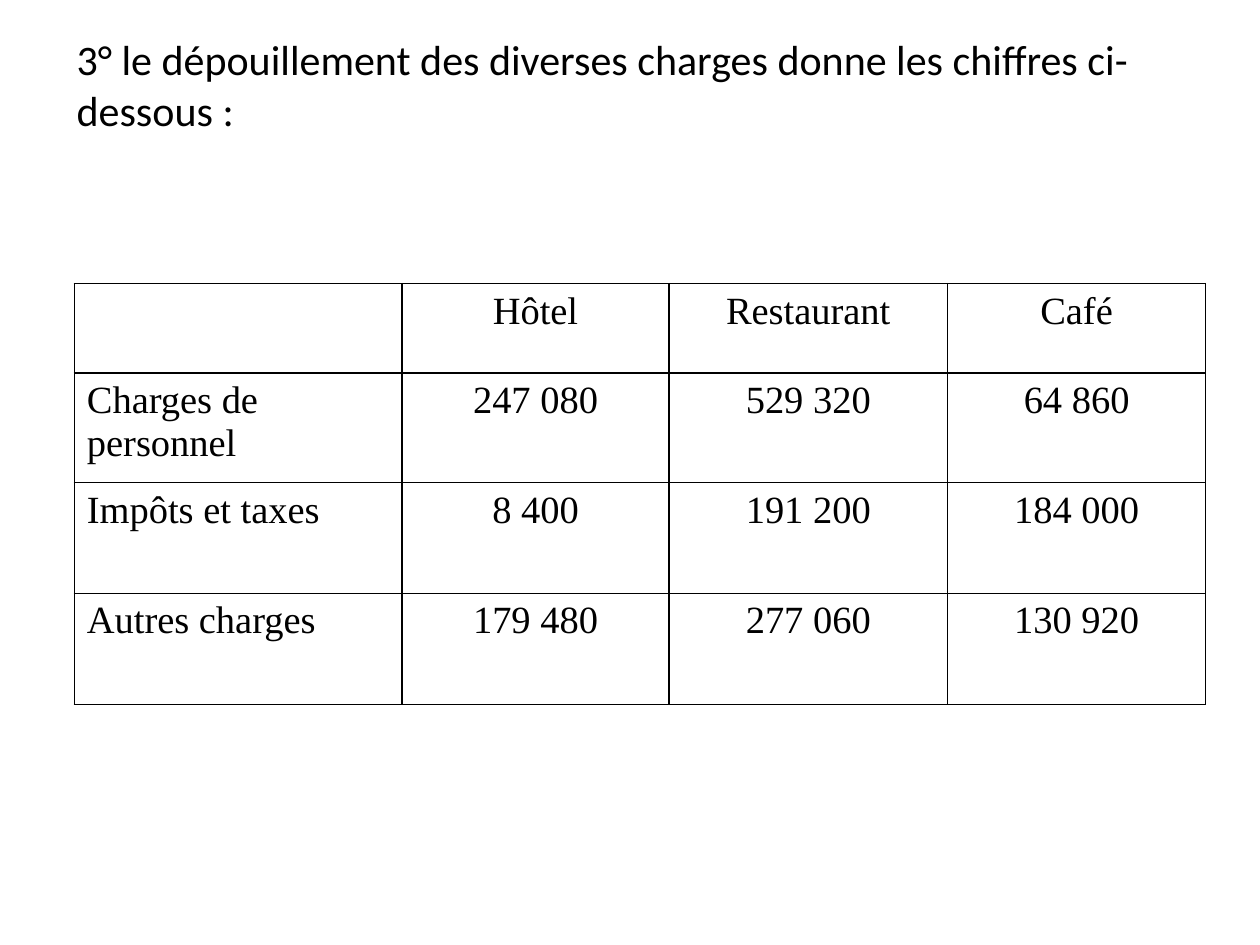
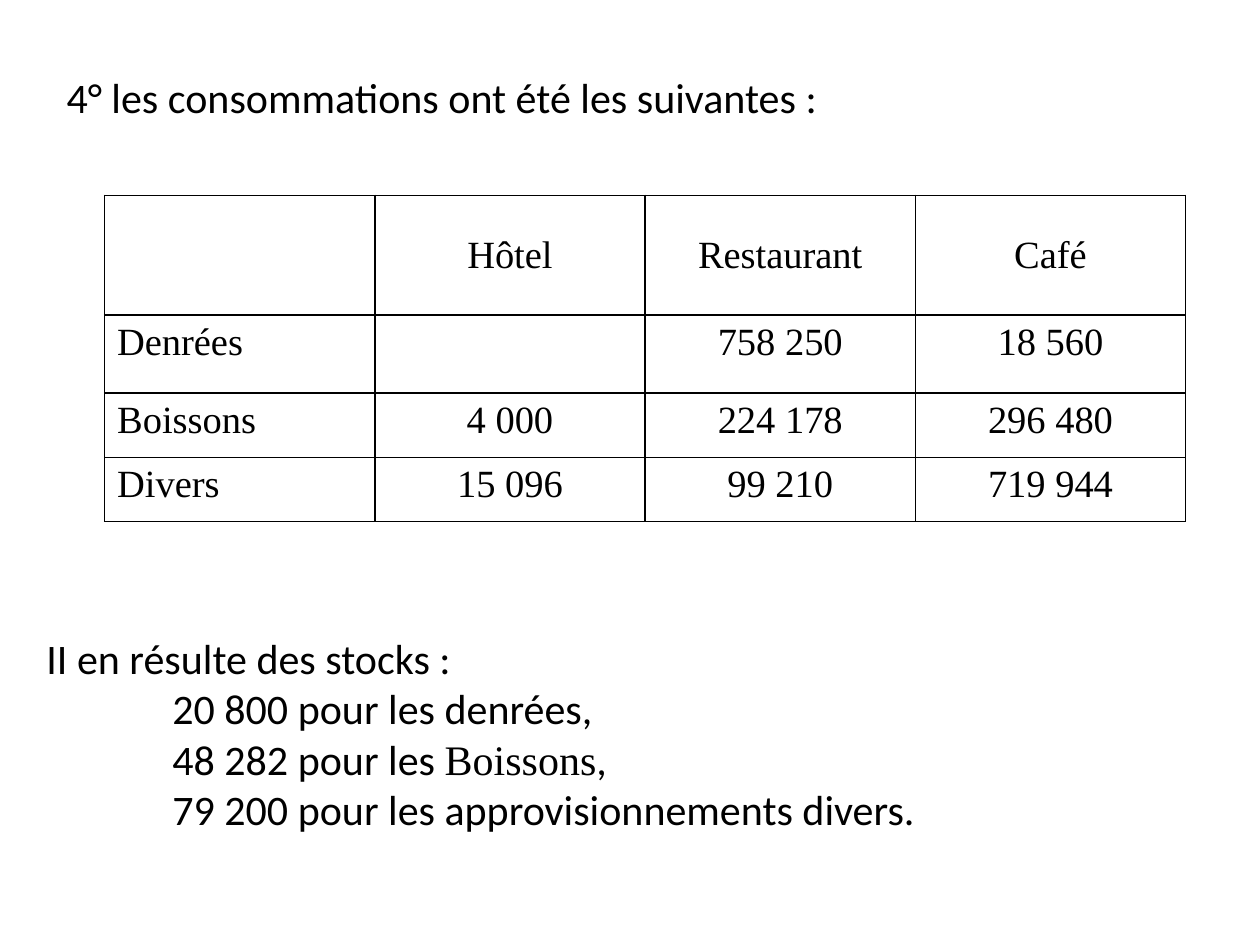
from pptx import Presentation
from pptx import util as u
from pptx.dml.color import RGBColor
from pptx.enum import text
from pptx.oxml.ns import qn
from lxml import etree

BLACK = "000000"
BODY_FONT = "Calibri"
TABLE_FONT = "Times New Roman"
DEPARTMENTS = ["", "Hôtel", "Restaurant", "Café"]
LEFT = text.PP_ALIGN.LEFT
CENTER = text.PP_ALIGN.CENTER
JUSTIFY = text.PP_ALIGN.JUSTIFY
TOP = text.MSO_ANCHOR.TOP
MIDDLE = text.MSO_ANCHOR.MIDDLE


def colour(value):
    return RGBColor.from_string(value)


def write(paragraph, content, size=24, font=BODY_FONT, align=LEFT, indent=0):
    paragraph.alignment = align
    if indent:
        paragraph._p.get_or_add_pPr().set("marL", str(u.Inches(indent)))
    run = paragraph.add_run()
    run.text = content
    run.font.size = u.Pt(size)
    run.font.name = font
    run.font.color.rgb = colour(BLACK)


def add_text_box(slide, box, anchor=MIDDLE):
    shape = slide.shapes.add_textbox(*map(u.Inches, box))
    frame = shape.text_frame
    frame.word_wrap = True
    frame.vertical_anchor = anchor
    return frame


def add_heading(slide, box, content, anchor=MIDDLE):
    write(add_text_box(slide, box, anchor).paragraphs[0], content)


def add_borders(cell):
    properties = cell._tc.get_or_add_tcPr()
    for side in ("lnL", "lnR", "lnT", "lnB"):
        line = etree.SubElement(properties, qn(f"a:{side}"), w=str(u.Pt(1)))
        fill = etree.SubElement(line, qn("a:solidFill"))
        etree.SubElement(fill, qn("a:srgbClr"), val=BLACK)


def add_department_table(slide, left, top, widths, heights, rows,
                         header_anchor=TOP, label_aligns=(LEFT,) * 3):
    contents = [DEPARTMENTS] + rows
    box = (left, top, sum(widths), sum(heights))
    table = slide.shapes.add_table(
        len(contents), len(DEPARTMENTS), *map(u.Inches, box)).table
    table.first_row = False
    table.horz_banding = False
    for column, width in zip(table.columns, widths):
        column.width = u.Inches(width)
    for row_index, (height, values) in enumerate(zip(heights, contents)):
        table.rows[row_index].height = u.Inches(height)
        for column_index, value in enumerate(values):
            cell = table.cell(row_index, column_index)
            add_borders(cell)
            cell.fill.background()
            cell.vertical_anchor = TOP if row_index else header_anchor
            if value:
                align = CENTER if column_index else label_aligns[row_index - 1]
                write(cell.text_frame.paragraphs[0], value, size=22,
                      font=TABLE_FONT, align=align)


def add_stocks(slide, box):
    frame = add_text_box(slide, box, TOP)
    write(frame.paragraphs[0], "II en résulte des stocks :", align=JUSTIFY)
    stocks = [
        [("20 800 pour les denrées,", BODY_FONT)],
        [("48 282 pour les ", BODY_FONT), ("Boissons", TABLE_FONT),
         (",", BODY_FONT)],
        [("79 200 pour les approvisionnements divers.", BODY_FONT)],
    ]
    for stock in stocks:
        paragraph = frame.add_paragraph()
        for content, font in stock:
            write(paragraph, content, font=font, align=JUSTIFY, indent=1)


def build_charges(slide):
    add_heading(
        slide, (0.51, 0.22, 9.21, 1.2),
        "3° le dépouillement des diverses charges donne les chiffres "
        "ci-dessous :", TOP)
    add_department_table(
        slide, 0.59, 2.25, [2.6, 2.12, 2.21, 2.05], [0.71, 0.87, 0.88, 0.88],
        [["Charges de personnel", "247 080", "529 320", "64 860"],
         ["Impôts et taxes", "8 400", "191 200", "184 000"],
         ["Autres charges", "179 480", "277 060", "130 920"]],
        label_aligns=(LEFT, JUSTIFY, JUSTIFY))


def build_consumption(slide):
    add_heading(slide, (0.43, 0.52, 7.8, 0.5),
                "4° les consommations ont été les suivantes :")
    add_department_table(
        slide, 0.83, 1.55, [2.145] * 4, [0.95, 0.62, 0.51, 0.51],
        [["Denrées", "", "758 250", "18 560"],
         ["Boissons", "4 000", "224 178", "296 480"],
         ["Divers", "15 096", "99 210", "719 944"]],
        header_anchor=MIDDLE)
    add_stocks(slide, (0.27, 4.97, 9.28, 2.12))


def main():
    presentation = Presentation()
    presentation.slide_width = u.Inches(10)
    presentation.slide_height = u.Inches(7.5)
    for build in (build_charges, build_consumption):
        build(presentation.slides.add_slide(presentation.slide_layouts[6]))
    presentation.save("out.pptx")


if __name__ == "__main__":
    main()
